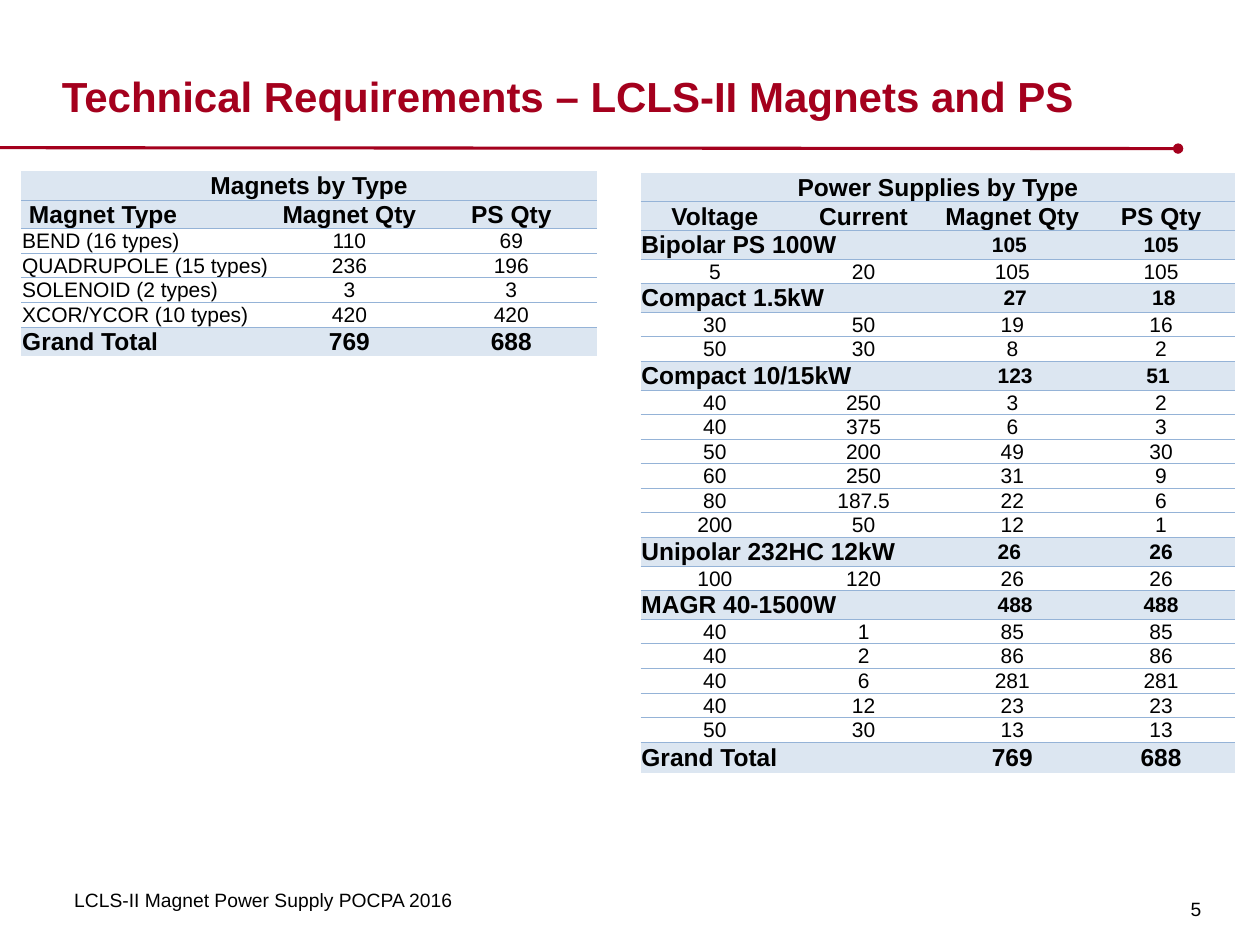
from dataclasses import dataclass
from enum import Enum

from lxml import etree
from pptx import Presentation
from pptx.dml.color import RGBColor
from pptx.enum.shapes import MSO_CONNECTOR
from pptx.enum.text import MSO_ANCHOR, MSO_AUTO_SIZE, PP_ALIGN
from pptx.oxml.ns import qn
from pptx.util import Pt

LEFT, CENTER = PP_ALIGN.LEFT, PP_ALIGN.CENTER
MIDDLE, BOTTOM = MSO_ANCHOR.MIDDLE, MSO_ANCHOR.BOTTOM
NO_GRID_STYLE = "{2D5ABB26-0587-4C30-8999-92F81FD0307C}"


@dataclass(frozen=True)
class Theme:
    font: str = "Arial"
    red: str = "A4001D"
    black: str = "000000"
    band: str = "DCE6F1"
    rule: str = "95B3D7"
    title_size: float = 24
    head_size: float = 14
    body_size: float = 12
    note_size: float = 11


THEME = Theme()


class Kind(Enum):
    CAPTION = 1
    HEADER = 2
    GROUP = 3
    ITEM = 4
    TOTAL = 5


@dataclass(frozen=True)
class Row:
    kind: Kind
    values: tuple[str, ...]


@dataclass(frozen=True)
class TableSpec:
    left: float
    top: float
    widths: tuple[float, ...]
    labels_first: bool  # the first column holds left-aligned names
    rows: list[Row]


def items(*lines: tuple[str, ...]) -> list[Row]:
    return [Row(Kind.ITEM, line) for line in lines]


def group(name: str, magnets: str, supplies: str) -> Row:
    return Row(Kind.GROUP, (name, "", magnets, supplies))


MAGNETS = TableSpec(12.2, 97.9, (144, 87, 98), True, [
    Row(Kind.CAPTION, ("Magnets by Type", "", "")),
    Row(Kind.HEADER, (" Magnet Type", "Magnet Qty", "PS Qty")),
    *items(("BEND (16 types)", "110", "69"),
           ("QUADRUPOLE (15 types)", "236", "196"),
           ("SOLENOID (2 types)", "3", "3"),
           ("XCOR/YCOR (10 types)", "420", "420")),
    Row(Kind.TOTAL, ("Grand Total", "769", "688")),
])

SUPPLIES = TableSpec(366, 98.9, (85, 85, 85, 85), False, [
    Row(Kind.CAPTION, ("Power Supplies by Type", "", "", "")),
    Row(Kind.HEADER, ("Voltage", "Current", "Magnet Qty", "PS Qty")),
    group("Bipolar PS 100W", "105 ", "105"),
    *items(("5", "20", "105", "105")),
    group("Compact 1.5kW", " 27", " 18"),
    *items(("30", "50", "19", "16"), ("50", "30", "8", "2")),
    group("Compact 10/15kW", " 123", "51 "),
    *items(("40", "250", "3", "2"), ("40", "375", "6", "3"),
           ("50", "200", "49", "30"), ("60", "250", "31", "9"),
           ("80", "187.5", "22", "6"), ("200", "50", "12", "1")),
    group("Unipolar 232HC 12kW", "26 ", "26"),
    *items(("100", "120", "26", "26")),
    group("MAGR 40-1500W", " 488", "488"),
    *items(("40", "1", "85", "85"), ("40", "2", "86", "86"),
           ("40", "6", "281", "281"), ("40", "12", "23", "23"),
           ("50", "30", "13", "13")),
    Row(Kind.TOTAL, ("Grand Total", "", "769", "688")),
])


def set_attrs(obj, values: dict) -> None:
    for name, value in values.items():
        setattr(obj, name, value)


def write(tf, text: str, size: float, color: str = THEME.black,
          bold: bool = False, align=LEFT) -> None:
    p = tf.paragraphs[0]
    p.alignment = align
    if not text:
        # An empty cell keeps the small type size, so its row stays low
        p._p.get_or_add_endParaRPr().set("sz", str(int(size * 100)))
        return
    r = p.add_run()
    r.text = text
    set_attrs(r.font, {"name": THEME.font, "size": Pt(size), "bold": bold})
    r.font.color.rgb = RGBColor.from_string(color)


def add_note(s, text: str, box: tuple[float, ...], **frame) -> None:
    tf = s.shapes.add_textbox(*map(Pt, box)).text_frame
    set_attrs(tf, {"word_wrap": True, **frame})
    write(tf, text, THEME.note_size)


def add_border(cell, tag: str) -> None:
    ln = etree.SubElement(cell._tc.get_or_add_tcPr(), qn(tag), w=str(Pt(0.5)))
    fill = etree.SubElement(ln, qn("a:solidFill"))
    etree.SubElement(fill, qn("a:srgbClr"), val=THEME.rule)


def format_cell(cell, row: Row, col: int, labels_first: bool) -> None:
    kind = row.kind
    set_attrs(cell, {"vertical_anchor": MIDDLE, "margin_left": Pt(0.5),
                     "margin_right": Pt(0.5), "margin_top": Pt(0.5),
                     "margin_bottom": Pt(0)})
    if kind is not Kind.CAPTION:
        add_border(cell, "a:lnT")
    if kind is not Kind.TOTAL:
        add_border(cell, "a:lnB")
    if kind is Kind.ITEM:
        cell.fill.background()
    else:
        cell.fill.solid()
        cell.fill.fore_color.rgb = RGBColor.from_string(THEME.band)
    small = kind is Kind.ITEM or (kind is Kind.GROUP and col > 0)
    named = kind in (Kind.GROUP, Kind.TOTAL) or (
        labels_first and kind is not Kind.CAPTION)
    write(cell.text_frame, row.values[col],
          THEME.body_size if small else THEME.head_size,
          bold=kind is not Kind.ITEM,
          align=LEFT if named and col == 0 else CENTER)


def add_data_table(s, spec: TableSpec) -> None:
    heights = [14.05 if row.kind is Kind.ITEM else 16.4 for row in spec.rows]
    tbl = s.shapes.add_table(
        len(spec.rows), len(spec.widths), Pt(spec.left), Pt(spec.top),
        Pt(sum(spec.widths)), Pt(sum(heights))).table
    set_attrs(tbl, {"first_row": False, "horz_banding": False})
    tbl._tbl.tblPr.find(qn("a:tableStyleId")).text = NO_GRID_STYLE
    for column, width in zip(tbl.columns, spec.widths):
        column.width = Pt(width)
    spans = {Kind.CAPTION: len(spec.widths), Kind.GROUP: 2}
    for i, (row, height) in enumerate(zip(spec.rows, heights)):
        tbl.rows[i].height = Pt(height)
        for col in range(len(spec.widths)):
            format_cell(tbl.cell(i, col), row, col, spec.labels_first)
        if row.kind in spans:
            tbl.cell(i, 0).merge(tbl.cell(i, spans[row.kind] - 1))


def add_title_rule(s) -> None:
    line = s.shapes.add_connector(MSO_CONNECTOR.STRAIGHT, Pt(0), Pt(84.4),
                                  Pt(673.2), Pt(84.9))
    line.line.width = Pt(1.75)
    line.line.color.rgb = RGBColor.from_string(THEME.red)
    etree.SubElement(line.line._get_or_add_ln(), qn("a:tailEnd"), type="oval")
    etree.SubElement(line._element.spPr, qn("a:effectLst"))


def main() -> None:
    prs = Presentation()
    set_attrs(prs, {"slide_width": Pt(720), "slide_height": Pt(540)})
    s = prs.slides.add_slide(prs.slide_layouts[5])

    # Title with its rule
    add_title_rule(s)
    title = s.shapes.title
    set_attrs(title, {"left": Pt(35.3), "top": Pt(10), "width": Pt(638),
                      "height": Pt(59)})
    tf = title.text_frame
    set_attrs(tf, {"margin_left": 0, "margin_right": 0, "margin_top": 0,
                   "margin_bottom": 0, "vertical_anchor": BOTTOM,
                   "word_wrap": True, "auto_size": MSO_AUTO_SIZE.NONE})
    write(tf, "Technical Requirements – LCLS-II Magnets and PS",
          THEME.title_size, THEME.red, bold=True)

    # Tables
    for spec in (MAGNETS, SUPPLIES):
        add_data_table(s, spec)

    # Footer and page number
    add_note(s, "LCLS-II Magnet Power Supply POCPA 2016",
             (35.3, 504, 324.7, 24.5))
    add_note(s, "5", (674.6, 497.5, 25.2, 42.5), vertical_anchor=MIDDLE,
             margin_left=Pt(5.8), margin_right=Pt(5.8),
             margin_top=Pt(4.3), margin_bottom=Pt(3.6))

    prs.save("out.pptx")


if __name__ == "__main__":
    main()
